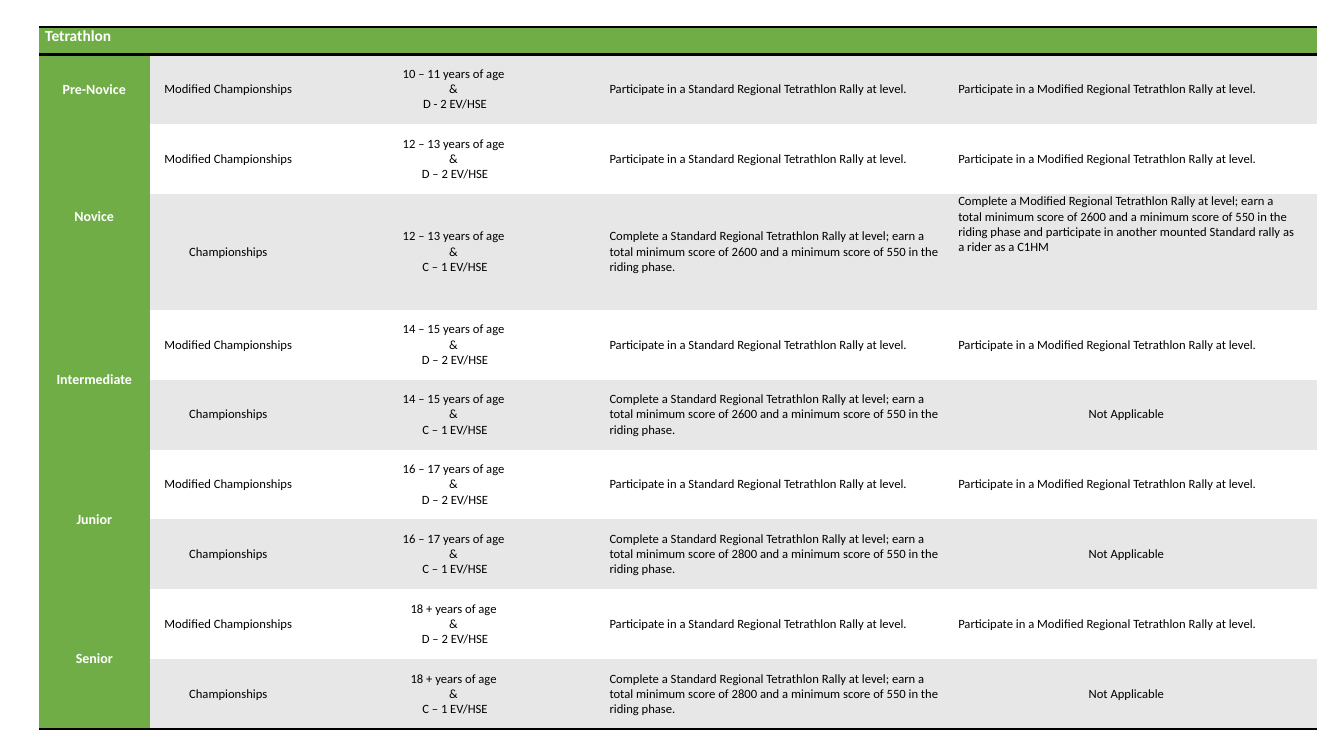
from lxml.etree import SubElement
from pptx import Presentation
from pptx.dml.color import RGBColor
from pptx.enum.text import MSO_ANCHOR as ANCHOR, PP_ALIGN as ALIGN
from pptx.oxml.ns import qn
from pptx.util import Cm, Pt

GREEN, GREY, WHITE, BLACK = "70AD47", "E7E7E7", "FFFFFF", "000000"
NO_GRID_STYLE = "{2D5ABB26-0587-4C30-8999-92F81FD0307C}"


def color(value):
    return RGBColor.from_string(value)


class TableSlide:
    font = "Calibri"
    margin = 0.16

    def __init__(self, prs):
        self.slide = prs.slides.add_slide(prs.slide_layouts[6])

    def table(self, left, top, widths, heights):
        frame = self.slide.shapes.add_table(
            len(heights), len(widths), Cm(left), Cm(top),
            Cm(sum(widths)), Cm(sum(heights)))
        table = frame.table
        table.first_row = table.horz_banding = False
        table._tbl.tblPr.find(qn("a:tableStyleId")).text = NO_GRID_STYLE
        for column, width in zip(table.columns, widths):
            column.width = Cm(width)
        for row, height in zip(table.rows, heights):
            row.height = Cm(height)
        return table

    def cell(self, cell, text, fill, size=9, ink=BLACK, bold=False,
             align=ALIGN.CENTER, anchor=ANCHOR.MIDDLE):
        cell.fill.solid()
        cell.fill.fore_color.rgb = color(fill)
        cell.margin_left = cell.margin_right = Cm(self.margin)
        cell.margin_top = cell.margin_bottom = 0
        cell.vertical_anchor = anchor
        tf = cell.text_frame
        tf.text = text
        for p in tf.paragraphs:
            p.alignment = align
            p.font.name = self.font
            p.font.size = Pt(size)
            p.font.bold = bold
            p.font.color.rgb = color(ink)

    def label(self, cell, text, size=10, **style):
        self.cell(cell, text, GREEN, size, WHITE, True, **style)

    def border(self, cell, side, width=2):
        tc_pr = cell._tc.get_or_add_tcPr()
        ln = SubElement(tc_pr, qn(f"a:ln{side}"), w=str(Pt(width)))
        fill = SubElement(ln, qn("a:solidFill"))
        SubElement(fill, qn("a:srgbClr"), val=BLACK)
        tc_pr.insert(0, ln)


def standard_score(total):
    return ("Complete a Standard Regional Tetrathlon Rally at level; earn a total "
            f"minimum score of {total} and a minimum score of 550 in the riding phase.")


def main():
    standard = "Participate in a Standard Regional Tetrathlon Rally at level."
    modified = "Participate in a Modified Regional Tetrathlon Rally at level."
    modified_score = (
        "Complete a Modified Regional Tetrathlon Rally at level; earn a total "
        "minimum score of 2600 and a minimum score of 550 in the riding phase "
        "and participate in another mounted Standard rally as a rider as a C1HM")
    not_applicable = "Not Applicable"
    mod_champs, champs = "Modified Championships", "Championships"
    entries = [
        (mod_champs, "10 – 11", "D - 2", standard, modified),
        (mod_champs, "12 – 13", "D – 2", standard, modified),
        (champs, "12 – 13", "C – 1", standard_score(2600), modified_score),
        (mod_champs, "14 – 15", "D – 2", standard, modified),
        (champs, "14 – 15", "C – 1", standard_score(2600), not_applicable),
        (mod_champs, "16 – 17", "D – 2", standard, modified),
        (champs, "16 – 17", "C – 1", standard_score(2800), not_applicable),
        (mod_champs, "18 +", "D – 2", standard, modified),
        (champs, "18 +", "C – 1", standard_score(2800), not_applicable),
    ]
    levels = [("Pre-Novice", 1, 1), ("Novice", 2, 3), ("Intermediate", 4, 5),
              ("Junior", 6, 7), ("Senior", 8, 9)]

    prs = Presentation()
    prs.slide_width, prs.slide_height = Cm(33.87), Cm(19.05)
    s = TableSlide(prs)
    widths = [2.79, 3.96, 7.47, 8.79, 8.79, 0.28]
    heights = [0.69] + [1.76] * 2 + [2.92] + [1.76] * 6
    table = s.table(0.98, 0.68, widths, heights)

    for col in range(len(widths)):
        s.label(table.cell(0, col), "Tetrathlon" if col == 0 else "", 11,
                align=ALIGN.LEFT, anchor=ANCHOR.TOP)
        s.border(table.cell(0, col), "B")
        s.border(table.cell(0, col), "T")
    table.cell(0, 0).merge(table.cell(0, len(widths) - 1))

    for row, (event, age, rating, first, second) in enumerate(entries, 1):
        fill = GREY if row == 1 or event == champs else WHITE
        s.label(table.cell(row, 0), "")
        s.cell(table.cell(row, 1), event, fill)
        s.cell(table.cell(row, 2), f"{age} years of age \n& \n{rating} EV/HSE", fill)
        s.cell(table.cell(row, 3), first, fill, align=ALIGN.LEFT)
        s.cell(table.cell(row, 4), second, fill,
               align=ALIGN.CENTER if second == not_applicable else ALIGN.LEFT,
               anchor=ANCHOR.TOP if second == modified_score else ANCHOR.MIDDLE)
        s.cell(table.cell(row, 5), "", fill)

    for name, top, bottom in levels:
        s.label(table.cell(top, 0), name)
        if bottom > top:
            table.cell(top, 0).merge(table.cell(bottom, 0))

    last = len(entries)
    for row, col in [(last - 1, 0)] + [(last, c) for c in range(len(widths))]:
        s.border(table.cell(row, col), "B")

    prs.save("out.pptx")


if __name__ == "__main__":
    main()
